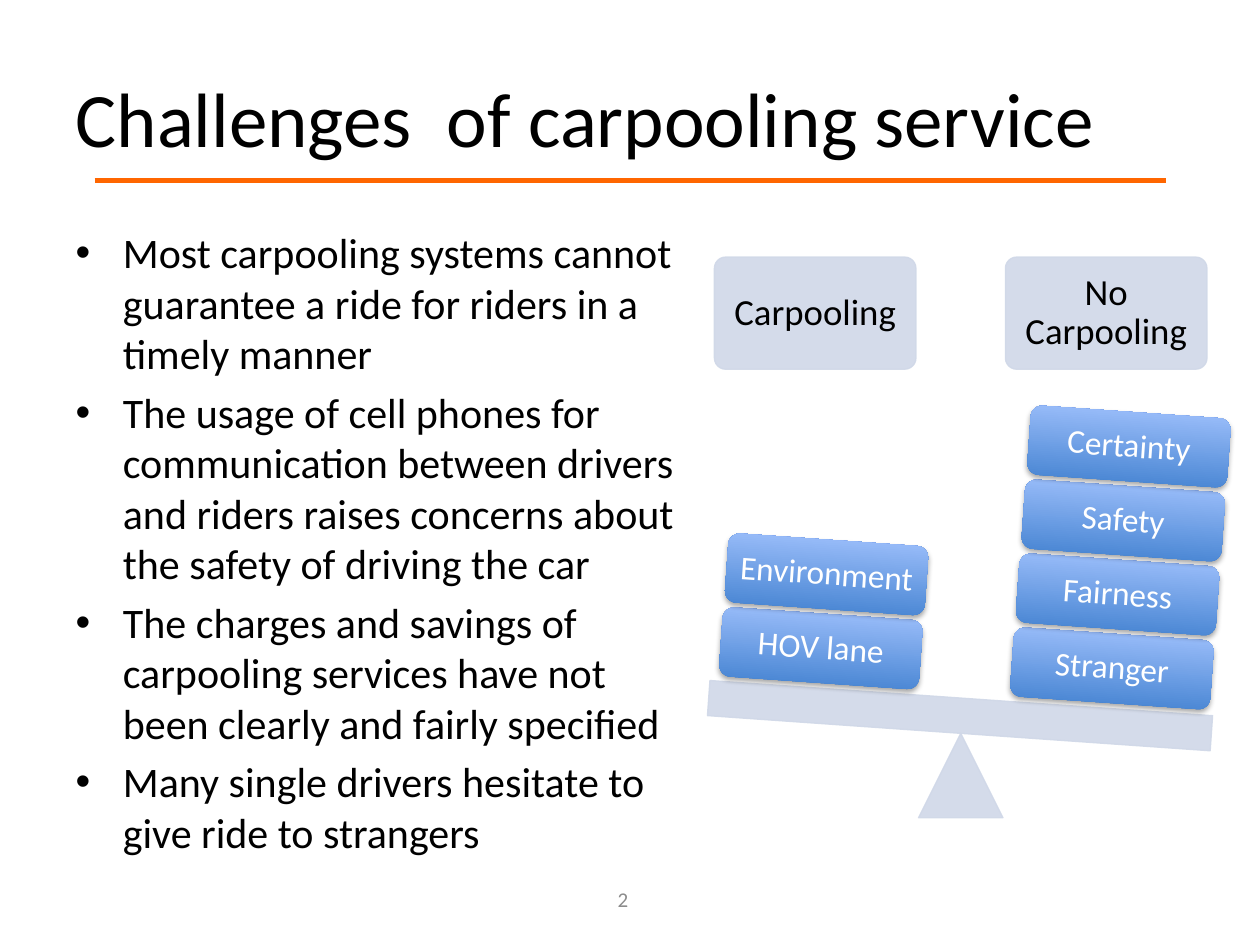
"""Slide weighing the challenges of a carpooling service on a tilted scale."""
from lxml import etree
from pptx import Presentation
from pptx import util as u
from pptx.dml.color import RGBColor
from pptx.enum import shapes, text
from pptx.oxml.ns import qn

COLUMNS, ROWS = 100, 75
CELL = u.Inches(0.1)
TILT = 4
STEP_X, STEP_Y = 0.45, -5.87
PALE, BLACK, WHITE = "D0D8E8", "000000", "FFFFFF"
CHALLENGES = [
    "Most carpooling systems cannot guarantee a ride for riders in a timely manner",
    "The usage of cell phones for communication between drivers and riders raises concerns about the safety of driving the car",
    "The charges and savings of carpooling services have not been clearly and fairly specified",
    "Many single drivers hesitate to give ride to strangers",
]
HEADINGS = [(56.7, "Carpooling"), (79.8, "No Carpooling")]
STACKS = [
    (80.3, 50.3, ["Stranger", "Fairness", "Safety", "Certainty"]),
    (57.2, 48.7, ["HOV lane", "Environment"]),
]


def cells(*counts):
    """Turn grid counts into lengths."""
    return [round(count * CELL) for count in counts]


def color(hex_code):
    """Turn a hex string into a colour."""
    return RGBColor.from_string(hex_code)


def style(paragraph, size, hex_code, align):
    """Format one paragraph."""
    paragraph.alignment = align
    paragraph.font.size = u.Pt(size)
    paragraph.font.name = "Calibri"
    paragraph.font.color.rgb = color(hex_code)


def fill_placeholder(holder, box, lines, size):
    """Move a placeholder and give it its text."""
    holder.left, holder.top, holder.width, holder.height = cells(*box)
    frame = holder.text_frame
    frame.text = "\n".join(lines)
    for paragraph in frame.paragraphs:
        style(paragraph, size, BLACK, text.PP_ALIGN.LEFT)
    frame.paragraphs[0].space_before = u.Pt(0)


def add_label(shape, wording, size, hex_code, inset):
    """Centre a label inside a shape."""
    frame = shape.text_frame
    frame.text = wording
    frame.word_wrap = True
    frame.vertical_anchor = text.MSO_ANCHOR.MIDDLE
    frame.margin_left = frame.margin_right = u.Inches(inset)
    frame.margin_top = frame.margin_bottom = u.Inches(inset)
    frame.paragraphs[0].line_spacing = 0.9
    style(frame.paragraphs[0], size, hex_code, text.PP_ALIGN.CENTER)


def add_pale_shape(slide, kind, box):
    """Add a slightly transparent part of the scale."""
    shape = slide.shapes.add_shape(kind, *cells(*box))
    shape.shadow.inherit = False
    shape.fill.solid()
    shape.fill.fore_color.rgb = color(PALE)
    shape.line.color.rgb = color(PALE)
    shape.line.width = u.Pt(0.75)
    for tint in shape._element.spPr.iter(qn("a:srgbClr")):
        etree.SubElement(tint, qn("a:alpha"), val="90000")
    return shape


def add_weight(slide, left, top, wording):
    """Add one tilted weight with a gradient and a soft shadow."""
    weight = slide.shapes.add_shape(
        shapes.MSO_SHAPE.ROUNDED_RECTANGLE, *cells(left, top, 15.9, 5.5))
    weight.rotation = TILT
    weight.fill.gradient()
    weight.fill.gradient_angle = 90
    for stop, shade in zip(weight.fill.gradient_stops, ("3F7FCE", "A4C4FF")):
        stop.color.rgb = color(shade)
    weight.line.fill.background()
    weight.shadow.inherit = False
    effects = weight._element.spPr.find(qn("a:effectLst"))
    shadow = etree.SubElement(
        effects, qn("a:outerShdw"), blurRad=str(u.Pt(3.1)),
        dist=str(u.Pt(1.8)), dir="5400000", rotWithShape="0")
    tint = etree.SubElement(shadow, qn("a:srgbClr"), val=BLACK)
    etree.SubElement(tint, qn("a:alpha"), val="35000")
    add_label(weight, wording, 19, WHITE, 0.06)


def add_rule(slide):
    """Draw the rule below the title."""
    rule = slide.shapes.add_connector(
        shapes.MSO_CONNECTOR.STRAIGHT, *cells(7.5, 14.3, COLUMNS - 7.5, 14.3))
    rule.line.color.rgb = color("FF6600")
    rule.line.width = u.Pt(3)
    etree.SubElement(rule._element.spPr, qn("a:effectLst"))


def add_scale(slide):
    """Build the headings, the scale and its stacks of weights."""
    for left, heading in HEADINGS:
        card = add_pale_shape(slide, shapes.MSO_SHAPE.ROUNDED_RECTANGLE,
                              (left, 20.4, 16, 8.9))
        card.adjustments[0] = 0.1
        add_label(card, heading, 21, BLACK, 0.09)
    add_pale_shape(slide, shapes.MSO_SHAPE.ISOSCELES_TRIANGLE,
                   (72.9, 58.2, 6.7, 6.7))
    beam = add_pale_shape(slide, shapes.MSO_SHAPE.RECTANGLE,
                          (56.2, 55.4, 40, 2.8))
    beam.rotation = TILT
    for left, top, weights in STACKS:
        for level, wording in enumerate(weights):
            add_weight(slide, left + level * STEP_X, top + level * STEP_Y, wording)


def main():
    """Build and save the slide."""
    deck = Presentation()
    deck.slide_width, deck.slide_height = cells(COLUMNS, ROWS)
    slide = deck.slides.add_slide(deck.slide_layouts[1])
    title, body = slide.placeholders
    add_rule(slide)
    fill_placeholder(title, (5, 3, 90, 12.5),
                     ["Challenges  of carpooling service"], 44)
    fill_placeholder(body, (5, 17.5, 50.6, 50.4), CHALLENGES, 24)
    add_scale(slide)
    page_number = slide.shapes.add_textbox(*cells(37.8, 69.5, 23.3, 4))
    add_label(page_number, "2", 12, "8C8C8C", 0.05)
    deck.save("out.pptx")


if __name__ == "__main__":
    main()
